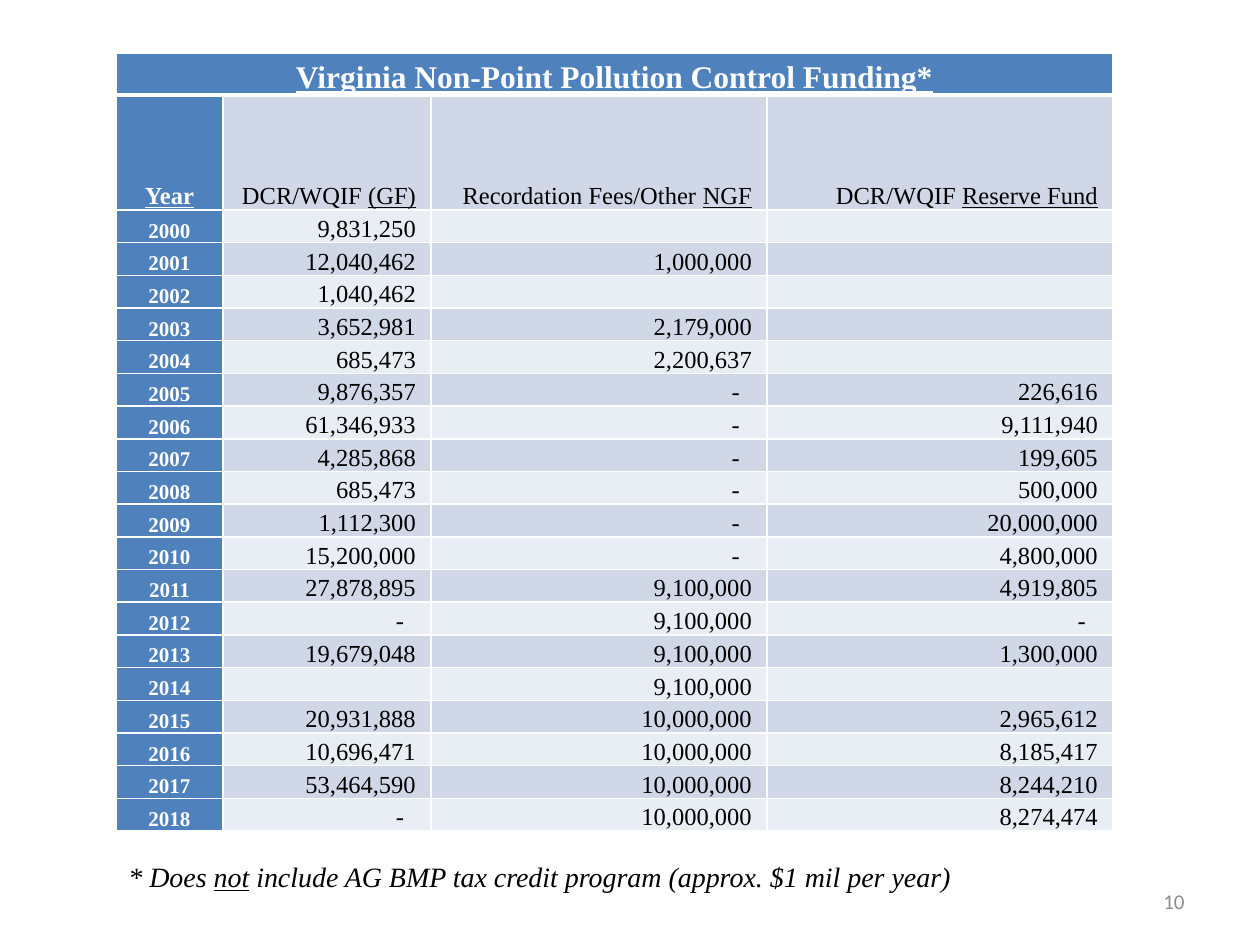
import pptx
import pptx.util
import lxml.etree
from pptx.dml.color import RGBColor
from pptx.enum.text import MSO_ANCHOR, MSO_AUTO_SIZE, PP_ALIGN
from pptx.oxml.ns import qn

PX = 914400 // 126
WHITE = RGBColor(0xFF, 0xFF, 0xFF)
BLACK = RGBColor(0, 0, 0)
GREY = RGBColor(0x8C, 0x8C, 0x8C)
BLUE = RGBColor(0x4F, 0x81, 0xBD)
DARK = RGBColor(0xD0, 0xD8, 0xE8)
LIGHT = RGBColor(0xE9, 0xED, 0xF4)

SERIF = "Times New Roman"
TITLE = dict(name=SERIF, size=18, color=WHITE, bold=True, underline=True)
HEAD = dict(TITLE, size=14)
YEAR = dict(TITLE, size=12, underline=False)
BODY = dict(name=SERIF, size=14, color=BLACK, bold=False, underline=False)
NOTE = dict(name=SERIF, size=16, color=BLACK, italic=True)
PAGE = dict(name="Calibri", size=12, color=GREY)

COLS = (107, 208, 336, 346)
TOP_H, HEAD_H, DATA_H = 42, 115, 622
PAD, NUM_PAD, DASH_PAD = 9, 15, 27

LABELS = (
    ("DCR/WQIF ", "(GF)"),
    ("Recordation Fees/Other ", "NGF"),
    ("DCR/WQIF ", "Reserve Fund"),
)
FUNDS = (
    ("2000", "9,831,250", "", ""),
    ("2001", "12,040,462", "1,000,000", ""),
    ("2002", "1,040,462", "", ""),
    ("2003", "3,652,981", "2,179,000", ""),
    ("2004", "685,473", "2,200,637", ""),
    ("2005", "9,876,357", "-", "226,616"),
    ("2006", "61,346,933", "-", "9,111,940"),
    ("2007", "4,285,868", "-", "199,605"),
    ("2008", "685,473", "-", "500,000"),
    ("2009", "1,112,300", "-", "20,000,000"),
    ("2010", "15,200,000", "-", "4,800,000"),
    ("2011", "27,878,895", "9,100,000", "4,919,805"),
    ("2012", "-", "9,100,000", "-"),
    ("2013", "19,679,048", "9,100,000", "1,300,000"),
    ("2014", "", "9,100,000", ""),
    ("2015", "20,931,888", "10,000,000", "2,965,612"),
    ("2016", "10,696,471", "10,000,000", "8,185,417"),
    ("2017", "53,464,590", "10,000,000", "8,244,210"),
    ("2018", "-", "10,000,000", "8,274,474"),
)


def set_font(font, form):
    for key, val in form.items():
        if key == "color":
            font.color.rgb = val
        else:
            setattr(font, key, pptx.util.Pt(val) if key == "size" else val)


def add_runs(para, parts):
    """Add (text, format) pairs; an empty text only sets the line size."""
    for text, form in parts:
        if text:
            run = para.add_run()
            run.text = text
            set_font(run.font, form)
        else:
            end = lxml.etree.SubElement(para._p, qn("a:endParaRPr"))
            end.set("sz", str(form["size"] * 100))


def add_edge(cell, side, width):
    line = lxml.etree.SubElement(cell._tc.get_or_add_tcPr(), qn("a:ln" + side))
    line.set("w", str(pptx.util.Pt(width)))
    fill = lxml.etree.SubElement(line, qn("a:solidFill"))
    lxml.etree.SubElement(fill, qn("a:srgbClr")).set("val", str(WHITE))


def fill_cell(cell, parts, shade, align=PP_ALIGN.RIGHT, pad=NUM_PAD, top=1, base=1):
    for side, width in (("L", 1), ("R", 1), ("T", top), ("B", base)):
        add_edge(cell, side, width)
    cell.fill.solid()
    cell.fill.fore_color.rgb = shade
    form = dict(margin_left=PAD * PX, margin_right=pad * PX, margin_top=0,
                margin_bottom=0, vertical_anchor=MSO_ANCHOR.BOTTOM)
    for key, val in form.items():
        setattr(cell, key, val)
    para = cell.text_frame.paragraphs[0]
    para.alignment = align
    para.line_spacing = 1.07
    add_runs(para, parts)


def add_funds(slide, left, top):
    """Place the funding table with its top left corner at the given point."""
    mid = dict(align=PP_ALIGN.CENTER, pad=PAD)
    frame = slide.shapes.add_table(
        len(FUNDS) + 2, len(COLS), left * PX, top * PX,
        sum(COLS) * PX, (TOP_H + HEAD_H + DATA_H) * PX)
    table = frame.table
    for col, width in zip(table.columns, COLS):
        col.width = width * PX
    for row in table.rows:
        row.height = DATA_H * PX // len(FUNDS)
    table.rows[0].height = TOP_H * PX
    table.rows[1].height = HEAD_H * PX

    table.cell(0, 0).merge(table.cell(0, len(COLS) - 1))
    title = [("Virginia Non-Point Pollution Control Funding*", TITLE)]
    for c in range(len(COLS)):
        fill_cell(table.cell(0, c), title if c == 0 else [], BLUE, base=3, **mid)

    fill_cell(table.cell(1, 0), [("Year", HEAD)], BLUE, top=3, **mid)
    for c, (plain, lined) in enumerate(LABELS, 1):
        parts = [(plain, BODY), (lined, dict(BODY, underline=True))]
        fill_cell(table.cell(1, c), parts, DARK, top=3)

    for r, (year, *sums) in enumerate(FUNDS, 2):
        fill_cell(table.cell(r, 0), [(year, YEAR)], BLUE, **mid)
        for c, text in enumerate(sums, 1):
            fill_cell(table.cell(r, c), [(text, BODY)], DARK if r % 2 else LIGHT,
                      pad=DASH_PAD if text == "-" else NUM_PAD)


def add_text(slide, box, parts, align, **form):
    frame = slide.shapes.add_textbox(*(n * PX for n in box)).text_frame
    for key, val in form.items():
        setattr(frame, key, val)
    para = frame.paragraphs[0]
    para.alignment = align
    add_runs(para, parts)


def main():
    deck = pptx.Presentation()
    deck.slide_width, deck.slide_height = 1260 * PX, 945 * PX
    slide = deck.slides.add_slide(deck.slide_layouts[6])
    add_text(slide, (903, 876, 294, 50), [("10", PAGE)], PP_ALIGN.RIGHT,
             word_wrap=True, vertical_anchor=MSO_ANCHOR.MIDDLE)
    add_funds(slide, 116, 53)
    note = [
        ("* Does ", NOTE),
        ("not", dict(NOTE, underline=True)),
        (" include AG BMP tax credit program (approx. $1 mil per year)", NOTE),
    ]
    add_text(slide, (116, 853, 859, 47), note, PP_ALIGN.LEFT,
             word_wrap=False, auto_size=MSO_AUTO_SIZE.SHAPE_TO_FIT_TEXT)
    deck.save("out.pptx")


if __name__ == "__main__":
    main()
